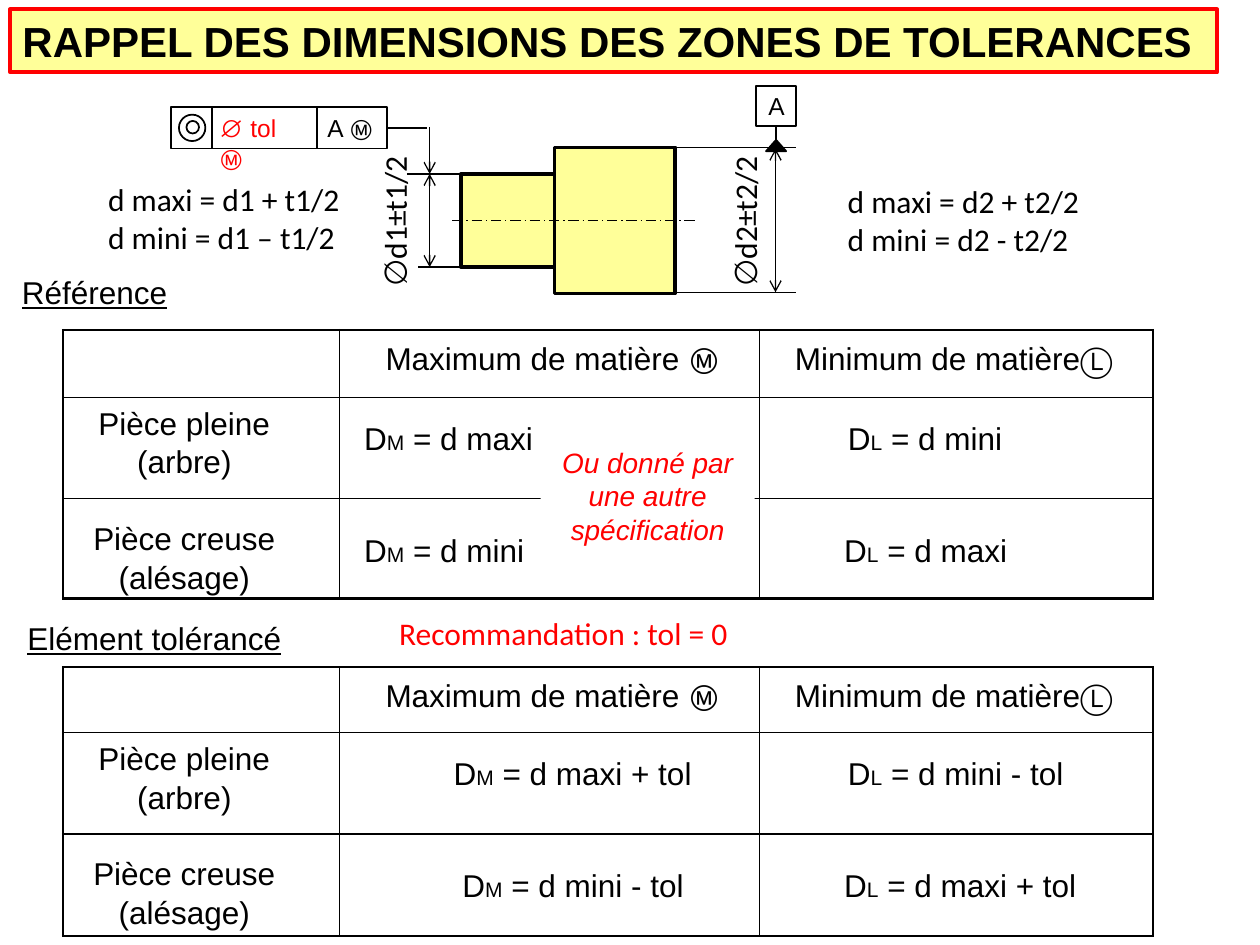
from lxml import etree
from pptx import Presentation
from pptx import util as u
from pptx.dml.color import RGBColor
from pptx.enum import dml, shapes, text
from pptx.oxml import ns

color = RGBColor.from_string
BLACK, RED, YELLOW, WHITE = "000000", "FF0000", "FFFF99", "FFFFFF"
CENTER = text.PP_ALIGN.CENTER

presentation = Presentation()
presentation.slide_width, presentation.slide_height = u.Inches(10), u.Inches(7.5)
slide = presentation.slides.add_slide(presentation.slide_layouts[6])
COLUMNS = 100  # the grid is 100 columns by 75 rows of square cells
CELL = presentation.slide_width / COLUMNS


def grid(*counts):
    """Turn numbers of grid columns or rows into lengths."""
    return [u.Emu(round(count * CELL)) for count in counts]


def write(frame, content, size=18, font="Arial", ink=BLACK, align=text.PP_ALIGN.LEFT,
          wrap=False, bold=None, italic=None, underline=None, spacing=None):
    """Fill a frame; pieces between bars are subscripts or circled letters."""
    frame.word_wrap = wrap
    frame.vertical_anchor = text.MSO_ANCHOR.TOP
    for number, line in enumerate(content.split("\n")):
        paragraph = frame.add_paragraph() if number else frame.paragraphs[0]
        paragraph.alignment = align
        paragraph.line_spacing = spacing
        for index, piece in enumerate(line.split("|")):
            if not piece:
                continue
            run = paragraph.add_run()
            run.text = piece
            circled = piece in "ⓂⓁ"
            run.font.name = "Noto Sans Mono" if circled else font
            run.font.size = u.Pt(12 if index % 2 and not circled else size)
            run.font.color.rgb = color(ink)
            run.font.bold, run.font.italic, run.font.underline = bold, italic, underline


# Tables: top, row heights, then the cells of each row as (text, left margin)
HEADER = [("", 0), ("Maximum de matière |Ⓜ|", 3.65), ("Minimum de matière|Ⓛ|", 2.8)]
SOLID, HOLLOW = ("Pièce pleine\n(arbre)", 0), ("Pièce creuse\n(alésage)", 0)
column_widths = grid(21.95, 33.35, 31.2)
row_margins = [(0.2, 0.2), (0.5, 1.7), (1.6, 2.5)]  # label, data
tables = [
    (26.2, (5.35, 8.05, 7.9), [
        HEADER,
        [SOLID, ("D|M| = d maxi", 1.95), ("D|L| = d mini", 7)],
        [HOLLOW, ("D|M| = d mini", 1.95), ("D|L| = d maxi", 6.7)]]),
    (52.95, (5.2, 8.05, 8.1), [
        HEADER,
        [SOLID, ("D|M| = d maxi + tol", 9.05), ("D|L| = d mini - tol", 7)],
        [HOLLOW, ("D|M| = d mini - tol", 9.75), ("D|L| = d maxi + tol", 6.7)]]),
]
for top, heights, rows in tables:
    table = slide.shapes.add_table(3, 3, *grid(5, top, 86.5, sum(heights))).table
    table.first_row = table.horz_banding = False
    for column, width in zip(table.columns, column_widths):
        column.width = width
    for r, (height, row) in enumerate(zip(grid(*heights), rows)):
        table.rows[r].height = height
        for c, (content, left) in enumerate(row):
            cell = table.cell(r, c)
            cell.fill.background()
            cell.margin_left, cell.margin_right, cell.margin_top, cell.margin_bottom = grid(
                left, 0 if c else 2.7, row_margins[r][c > 0], 0)
            write(cell.text_frame, content, wrap=True, spacing=1.09,
                  align=text.PP_ALIGN.LEFT if c else CENTER)
            edges = {"lnL": c == 0, "lnR": c == 2, "lnT": r == 0, "lnB": r == 2}
            for position, (edge, outer) in enumerate(edges.items()):
                border = etree.Element(ns.qn(f"a:{edge}"), w=str(u.Pt(1.5 if outer else 0.75)))
                fill = etree.SubElement(border, ns.qn("a:solidFill"))
                etree.SubElement(fill, ns.qn("a:srgbClr"), val=BLACK)
                cell._tc.get_or_add_tcPr().insert(position, border)

# Boxes and circles: place, fill, line colour, line width
KIND = shapes.MSO_SHAPE
outlines = {
    "title": (KIND.RECTANGLE, (0.8, 0.75, 95.8, 5), YELLOW, RED, 2.25),
    "small cylinder": (KIND.RECTANGLE, (36.6, 13.8, 7.4, 7.4), YELLOW, BLACK, 2),
    "large cylinder": (KIND.RECTANGLE, (44, 11.7, 9.6, 11.6), YELLOW, BLACK, 2),
    "tolerance frame": (KIND.RECTANGLE, (13.6, 8.5, 17.1, 3.3), None, BLACK, 1),
    "inner circle": (KIND.OVAL, (14.8, 9.6, 1, 1), None, BLACK, 1),
    "outer circle": (KIND.OVAL, (14.2, 9.1, 2.1, 2.1), None, BLACK, 1),
    "datum frame": (KIND.RECTANGLE, (60, 6.8, 3.2, 3.2), None, BLACK, 1),
    "note": (KIND.RECTANGLE, (42.9, 34.85, 17, 9.1), WHITE, None, 0),
}
boxes = {}
for name, (kind, place, fill, ink, weight) in outlines.items():
    shape = boxes[name] = slide.shapes.add_shape(kind, *grid(*place))
    shape.shadow.inherit = False
    if fill:
        shape.fill.solid()
        shape.fill.fore_color.rgb = color(fill)
    else:
        shape.fill.background()
    if ink:
        shape.line.color.rgb = color(ink)
        shape.line.width = u.Pt(weight)
    else:
        shape.line.fill.background()
write(boxes["title"].text_frame, "RAPPEL DES DIMENSIONS DES ZONES DE TOLERANCES", 24, bold=True)
write(boxes["note"].text_frame, "Ou donné par une autre spécification", 16,
      ink=RED, align=CENTER, wrap=True, italic=True)

# Lines: ends, width, arrowheads, box the line starts from and its side
lines = [
    ((35.9, 17.5, 55.3, 17.5), 0.75, (), None),
    ((16.8, 8.5, 16.8, 11.8), 1, (), None),
    ((25.15, 8.5, 25.15, 11.8), 1, (), None),
    ((30.7, 10.15, 33.9, 10.15), 0.75, (), ("tolerance frame", 3)),
    ((34.1, 10.1, 34.1, 13.8), 0.75, ("tailEnd",), None),
    ((32.3, 13.8, 37.1, 13.8), 0.75, (), None),
    ((33.2, 21.2, 38, 21.2), 0.75, (), None),
    ((34.1, 13.8, 34.1, 21.2), 0.75, ("headEnd", "tailEnd"), None),
    ((53.6, 11.7, 63.2, 11.7), 0.75, (), None),
    ((53.6, 23.2, 63.2, 23.2), 0.75, (), None),
    ((61.55, 11.8, 61.55, 23.2), 0.75, ("headEnd", "tailEnd"), None),
    ((61.6, 10, 61.6, 11.5), 1, (), ("datum frame", 2)),
]
for index, (ends, weight, arrows, start) in enumerate(lines):
    line = slide.shapes.add_connector(shapes.MSO_CONNECTOR.STRAIGHT, *grid(*ends))
    line.line.color.rgb = color(BLACK)
    line.line.width = u.Pt(weight)
    if index == 0:  # the axis of the part
        line.line.dash_style = dml.MSO_LINE.LONG_DASH_DOT
    for arrow in arrows:
        etree.SubElement(line.line._get_or_add_ln(), ns.qn(f"a:{arrow}"), type="arrow")
    etree.SubElement(line._element.spPr, ns.qn("a:effectLst"))
    if start:
        line.begin_connect(boxes[start[0]], start[1])

builder = slide.shapes.build_freeform(*grid(60.8, 12), scale=1.0)
builder.add_line_segments([grid(62.4, 12), grid(61.6, 11.1)], close=True)
triangle = builder.convert_to_shape()
triangle.shadow.inherit = False
triangle.fill.solid()
triangle.fill.fore_color.rgb = color(BLACK)
triangle.line.color.rgb = color(BLACK)
triangle.line.width = u.Pt(1)

# Labels: place, text, format, rotation
CALIBRI = {"font": "Calibri"}
labels = [
    ((0.75, 21.15, 13.7, 4), "Référence", {"underline": True}, 0),
    ((1.2, 48.65, 22.4, 4), "Elément tolérancé", {"underline": True}, 0),
    ((25, 8.5, 5.7, 3.4), "A |Ⓜ|", {"size": 14}, 0),
    ((16.4, 8.5, 8.7, 3.4), "∅ tol |Ⓜ|", {"size": 14, "ink": RED, "wrap": True}, 0),
    ((60, 6.7, 3.4, 3.4), "A", {"size": 14}, 0),
    ((25.05, 15.5, 12.5, 4), "∅d1±t1/2", CALIBRI, 270),
    ((52.85, 15.5, 12.5, 4), "∅d2±t2/2", CALIBRI, 270),
    ((7.6, 13.8, 20.6, 7.1), "d maxi = d1 + t1/2\nd mini = d1 – t1/2", CALIBRI, 0),
    ((66.3, 13.95, 20.6, 7.1), "d maxi = d2 + t2/2\nd mini = d2 - t2/2", CALIBRI, 0),
    ((30.7, 48.25, 28.4, 4), "Recommandation : tol = 0", {"font": "Calibri", "ink": RED}, 0),
]
for place, content, style, rotation in labels:
    label = slide.shapes.add_textbox(*grid(*place))
    label.rotation = rotation
    write(label.text_frame, content, **style)

presentation.save("out.pptx")
